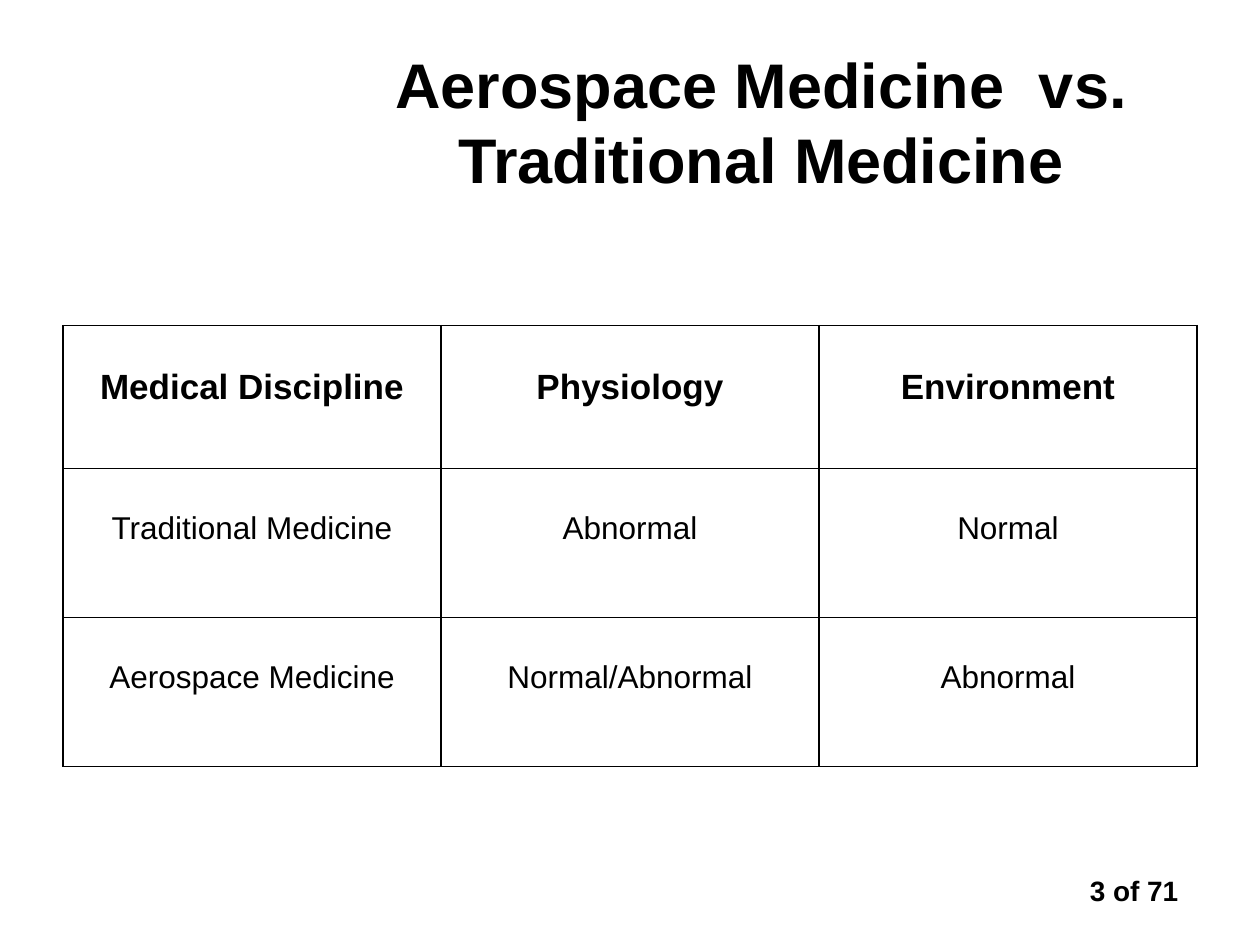
"""Build a slide that compares aerospace and traditional medicine in a table."""
from lxml import etree
from pptx import Presentation
from pptx import util as u
from pptx.dml.color import RGBColor
from pptx.enum import text
from pptx.oxml import ns

BLACK = RGBColor(0, 0, 0)
ROWS = [
    ["Medical Discipline", "Physiology", "Environment"],
    ["Traditional Medicine", "Abnormal", "Normal"],
    ["Aerospace Medicine", "Normal/Abnormal", "Abnormal"],
]


class Deck:
    font = "Arial"
    ink = BLACK

    def __init__(self, slide):
        self.slide = slide

    def words(self, frame, lines, size, bold):
        para = frame.paragraphs[0]
        para.alignment = text.PP_ALIGN.CENTER
        for num, line in enumerate(lines):
            if num:
                para.add_line_break()
            run = para.add_run()
            run.text = line
            run.font.name = self.font
            run.font.size = u.Pt(size)
            run.font.bold = bold
            run.font.color.rgb = self.ink
        return para

    def label(self, area, lines, size, anchor=text.MSO_ANCHOR.TOP):
        box = self.slide.shapes.add_textbox(*map(u.Pt, area))
        frame = box.text_frame
        frame.word_wrap = True
        frame.vertical_anchor = anchor
        return self.words(frame, lines, size, True)

    def border(self, cell):
        props = cell._tc.get_or_add_tcPr()
        for side in ("lnL", "lnR", "lnT", "lnB"):
            line = etree.SubElement(props, ns.qn(f"a:{side}"), w=str(u.Pt(1)))
            fill = etree.SubElement(line, ns.qn("a:solidFill"))
            etree.SubElement(fill, ns.qn("a:srgbClr"), val=str(self.ink))

    def table(self, area, rows, heights):
        frame = self.slide.shapes.add_table(len(rows), len(rows[0]), *map(u.Pt, area))
        grid = frame.table
        grid.first_row = grid.horz_banding = False
        for r, row in enumerate(rows):
            grid.rows[r].height = u.Pt(heights[r])
            head = r == 0
            for c, word in enumerate(row):
                cell = grid.cell(r, c)
                cell.margin_top = u.Pt(24.3)
                self.border(cell)
                cell.fill.background()
                self.words(cell.text_frame, [word], 20 if head else 18, head)


def main():
    prs = Presentation()
    prs.slide_width, prs.slide_height = u.Pt(720), u.Pt(540)
    deck = Deck(prs.slides.add_slide(prs.slide_layouts[6]))
    deck.label((186, 12, 498, 114), ["Aerospace Medicine  vs.", "Traditional Medicine"],
               36, text.MSO_ANCHOR.MIDDLE)
    deck.table((36, 186, 648, 252), ROWS, (81.6, 85.2, 85.2))
    page = deck.label((606, 498, 84, 24.5), ["3 of 71"], 16)
    page.line_spacing = 0.9
    prs.save("out.pptx")


if __name__ == "__main__":
    main()
